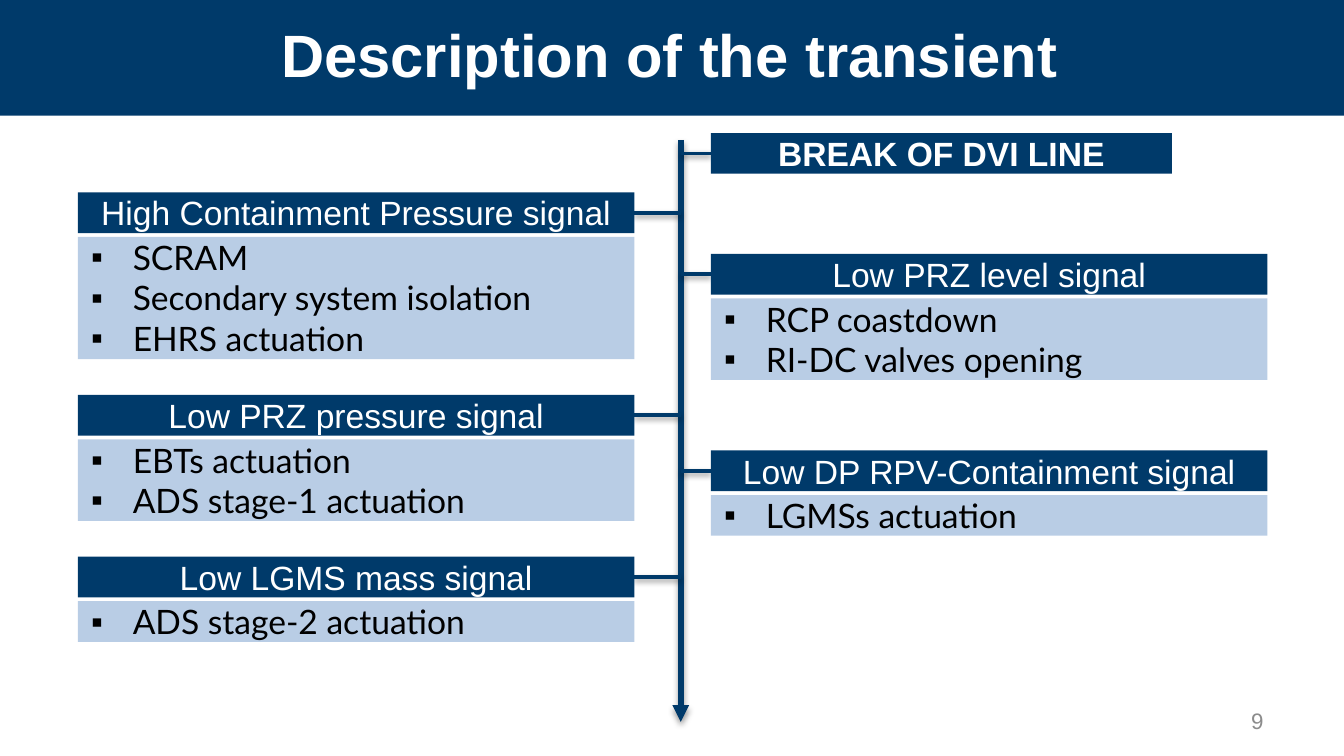
from dataclasses import dataclass

from lxml import etree
from pptx import Presentation
from pptx import util as u
from pptx.dml.color import RGBColor
from pptx.enum import shapes, text
from pptx.oxml.ns import qn

HUES = {"navy": "003A6A", "pale": "B9CDE5", "white": "FFFFFF",
        "black": "000000", "gray": "8C8C8C"}

# The grid has 100 columns and 100 rows
WIDE = u.Inches(10)
HIGH = WIDE * 9 // 16
LINE = 5.39    # rows in one line of text
GAP = 0.5      # rows between a signal and its actions
LEFT, RIGHT, SPAN = 5.8, 52.9, 41.4
AXIS = 50.65


@dataclass
class Event:
    col: float
    row: float
    name: str
    acts: tuple = ()
    span: float = SPAN
    bold: bool = False


EVENTS = (
    Event(RIGHT, 17.6, "BREAK OF DVI LINE", span=34.3, bold=True),
    Event(LEFT, 25.45, "High Containment Pressure signal",
          ("SCRAM", "Secondary system isolation", "EHRS actuation")),
    Event(RIGHT, 33.6, "Low PRZ level signal",
          ("RCP coastdown", "RI-DC valves opening")),
    Event(LEFT, 52.25, "Low PRZ pressure signal",
          ("EBTs actuation", "ADS stage-1 actuation")),
    Event(RIGHT, 59.6, "Low DP RPV-Containment signal", ("LGMSs actuation",)),
    Event(LEFT, 73.65, "Low LGMS mass signal", ("ADS stage-2 actuation",)),
)


def x(cols: float) -> int:
    return round(WIDE * cols / 100)


def y(rows: float) -> int:
    return round(HIGH * rows / 100)


def hue(name: str) -> RGBColor:
    return RGBColor.from_string(HUES[name])


def add(node, tag: str, **attrs):
    return etree.SubElement(node, qn(tag), attrs)


def write(shape, lines, size=18, font="Arial", color="white", bold=False,
          align=text.PP_ALIGN.CENTER, anchor=text.MSO_ANCHOR.TOP,
          bullet="", before=0, after=0) -> None:
    frame = shape.text_frame
    frame.word_wrap = True
    frame.vertical_anchor = anchor
    frame.margin_left = frame.margin_right = u.Inches(0.1)
    frame.margin_top = frame.margin_bottom = 0
    for i, line in enumerate(lines):
        para = frame.paragraphs[0] if i == 0 else frame.add_paragraph()
        para.alignment = align
        if before:
            para.space_before = u.Pt(before)
        if after:
            para.space_after = u.Pt(after)
        if bullet:
            props = para._p.get_or_add_pPr()
            indent = u.Inches(0.31)
            props.set("marL", str(indent))
            props.set("indent", str(-indent))
            add(props, "a:buFont", typeface="Arial")
            add(props, "a:buChar", char=bullet)
        run = para.add_run()
        run.text = line
        run.font.size = u.Pt(size)
        run.font.name = font
        run.font.bold = bold
        run.font.color.rgb = hue(color)


def block(slide, col: float, row: float, cols: float, rows: float, fill: str):
    shape = slide.shapes.add_shape(shapes.MSO_SHAPE.RECTANGLE,
                                   x(col), y(row), x(cols), y(rows))
    shape.shadow.inherit = False
    shape.fill.solid()
    shape.fill.fore_color.rgb = hue(fill)
    shape.line.fill.background()
    return shape


def label(slide, col: float, row: float, cols: float, rows: float):
    return slide.shapes.add_textbox(x(col), y(row), x(cols), y(rows))


def link(slide, start: tuple, end: tuple, width: float, arrow=False) -> None:
    line = slide.shapes.add_connector(
        shapes.MSO_CONNECTOR.STRAIGHT,
        x(start[0]), y(start[1]), x(end[0]), y(end[1]))
    line.line.color.rgb = hue("navy")
    line.line.width = u.Pt(width)
    if arrow:
        add(line.line._get_or_add_ln(), "a:tailEnd", type="triangle")
    # Soft shadow straight below
    glow = add(add(line._element.spPr, "a:effectLst"), "a:outerShdw",
               blurRad=str(u.Pt(3.1)), dist=str(u.Pt(1.6)),
               dir="5400000", rotWithShape="0")
    add(add(glow, "a:srgbClr", val=HUES["black"]), "a:alpha", val="38000")


def draw(slide, event: Event) -> None:
    mid = event.row + LINE / 2
    edge = RIGHT if event.col == RIGHT else LEFT + SPAN
    link(slide, (min(edge, AXIS), mid), (max(edge, AXIS), mid), 2)
    if event.acts:
        body = block(slide, event.col, event.row + LINE + GAP, event.span,
                     LINE * len(event.acts), "pale")
        write(body, event.acts, font="Lato", color="black", bullet="▪",
              align=text.PP_ALIGN.LEFT)
    head = block(slide, event.col, event.row, event.span, LINE, "navy")
    write(head, [event.name], bold=event.bold)


def main() -> None:
    deck = Presentation()
    deck.slide_width, deck.slide_height = WIDE, HIGH
    slide = deck.slides.add_slide(deck.slide_layouts[6])

    # Title band and page number
    block(slide, 0, 0, 100, 15.3, "navy")
    write(label(slide, -0.8, 2.3, 101.3, 9.6), ["Description of the transient"],
          size=32, bold=True, anchor=text.MSO_ANCHOR.MIDDLE, after=3)
    write(label(slide, 89.6, 92.6, 5.4, 5.3), ["9"], size=12, color="gray",
          align=text.PP_ALIGN.RIGHT, anchor=text.MSO_ANCHOR.MIDDLE)

    # Time axis and its events
    link(slide, (AXIS, 18.5), (AXIS, 95.5), 3, arrow=True)
    for event in EVENTS:
        draw(slide, event)

    deck.save("out.pptx")


if __name__ == "__main__":
    main()
